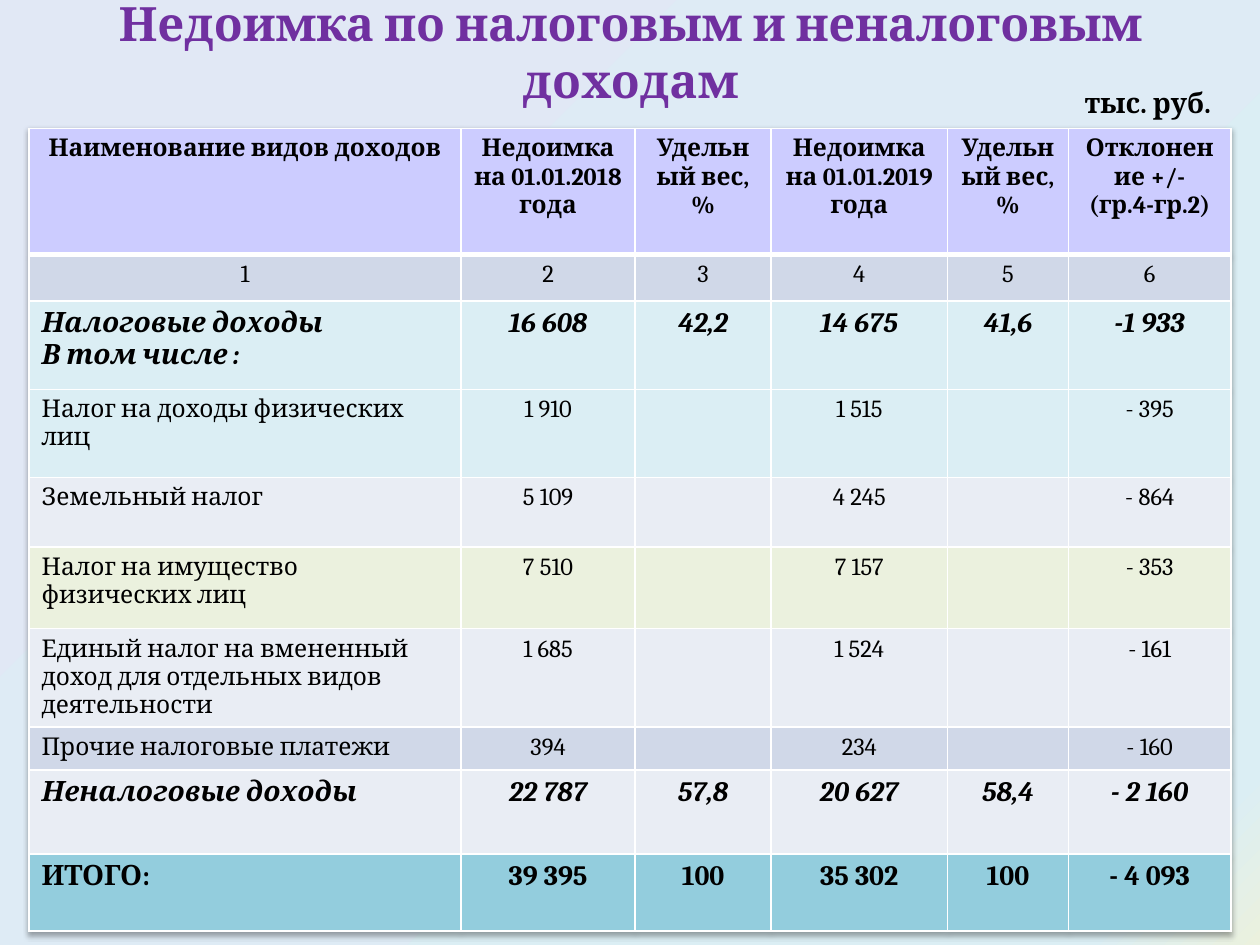
from copy import deepcopy

from lxml import etree
from pptx import Presentation
from pptx import util as u
from pptx.dml import color
from pptx.enum import text
from pptx.oxml import ns, parse_xml

FONT = "Cambria"
CENTER, LEFT = text.PP_ALIGN.CENTER, text.PP_ALIGN.LEFT


def rgb(value):
    return color.RGBColor.from_string(value)


def style(frame, size, ink="000000", bold=False, italic=False, align=CENTER):
    for para in frame.paragraphs:
        para.alignment = align
        for span in para.runs:
            font = span.font
            font.name, font.size, font.bold, font.italic = FONT, u.Pt(size), bold, italic
            font.color.rgb = rgb(ink)
        if not para.runs:
            etree.SubElement(para._p, ns.qn("a:endParaRPr"), sz=str(size * 100))


deck = Presentation()
deck.slide_width, deck.slide_height = u.Inches(10), u.Inches(7.5)
step = deck.slide_width // 1000
page = deck.slides.add_slide(deck.slide_layouts[6])

backdrop = page.background.fill
backdrop.gradient()
backdrop.gradient_angle = 135
stop_list = next(page._element.iter(ns.qn("a:gsLst")))
stop_list.append(deepcopy(stop_list[0]))
for stop, (position, shade) in zip(
    backdrop.gradient_stops, [(0, "EBF1DE"), (0.08, "DBEEF4"), (1, "E1E8F5")]
):
    stop.position = position
    stop.color.rgb = rgb(shade)

columns = [343, 138, 108, 140, 96, 129]
rows = [100, 37, 70, 70, 55, 65, 78, 34, 67, 61]
table_left, table_top = 23, 102
entries = [
    ("CCCCFF", "head", ["Наименование видов доходов", "Недоимка на 01.01.2018 года", "Удельный вес, %",
                        "Недоимка на 01.01.2019 года", "Удельный вес, %", "Отклонение +/-\n(гр.4-гр.2)"]),
    ("D0D8E8", "number", ["1", "2", "3", "4", "5", "6"]),
    ("DBEEF4", "group", ["Налоговые доходы\nВ том числе :", "16 608", "42,2", "14 675", "41,6", "-1 933"]),
    ("DBEEF4", "item", ["Налог на доходы физических лиц", "1 910", "", "1 515", "", "- 395"]),
    ("E9EDF4", "item", ["Земельный налог", "5 109", "", "4 245", "", "- 864"]),
    ("EBF1DE", "item", ["Налог на имущество физических лиц", "7 510", "", "7 157", "", "- 353"]),
    ("E9EDF4", "item", ["Единый налог на вмененный доход для отдельных видов деятельности",
                        "1 685", "", "1 524", "", "- 161"]),
    ("D0D8E8", "item", ["Прочие налоговые платежи", "394", "", "234", "", "- 160"]),
    ("E9EDF4", "group", ["Неналоговые доходы", "22 787", "57,8", "20 627", "58,4", "- 2 160"]),
    ("93CDDD", "total", ["ИТОГО:", "39 395", "100", "35 302", "100", "- 4 093"]),
]

grid = page.shapes.add_table(
    len(rows), len(columns), table_left * step, table_top * step, sum(columns) * step, sum(rows) * step
)
table = grid.table
table.horz_banding = False
for column, width in zip(table.columns, columns):
    column.width = width * step
for row, height in zip(table.rows, rows):
    row.height = height * step
table._tbl.tblPr.insert(0, parse_xml(
    f'<a:effectLst {ns.nsdecls("a")}><a:outerShdw blurRad="40000" dist="23000" dir="5400000" rotWithShape="0">'
    '<a:srgbClr val="000000"><a:alpha val="35000"/></a:srgbClr></a:outerShdw></a:effectLst>'
))

for row_index, (shade, role, values) in enumerate(entries):
    for column_index, value in enumerate(values):
        cell = table.cell(row_index, column_index)
        cell.text_frame.text = value
        cell.fill.solid()
        cell.fill.fore_color.rgb = rgb(shade)
        style(
            cell.text_frame,
            16 if role in ("group", "total") else 14,
            bold=role in ("head", "group", "total"),
            italic=role == "group",
            align=LEFT if column_index == 0 and role not in ("head", "number") else CENTER,
        )
        for order, side in enumerate("LRTB"):
            thick = (row_index, side) in ((0, "B"), (1, "T"))
            cell._tc.tcPr.insert(order, parse_xml(
                f'<a:ln{side} {ns.nsdecls("a")} w="{u.Pt(3 if thick else 1)}">'
                f'<a:solidFill><a:srgbClr val="FFFFFF"/></a:solidFill></a:ln{side}>'
            ))

captions = [
    ("Недоимка по налоговым и неналоговым доходам", (28, 13, 945, 55), 27, "7030A0", text.MSO_ANCHOR.MIDDLE),
    ("тыс. руб.", (846, 63, 130, 37), 16, "000000", text.MSO_ANCHOR.TOP),
]
for words, place, size, ink, anchor in captions:
    box = page.shapes.add_textbox(*(part * step for part in place))
    frame = box.text_frame
    frame.word_wrap = True
    frame.vertical_anchor = anchor
    frame.text = words
    style(frame, size, ink, bold=True)

deck.save("out.pptx")
